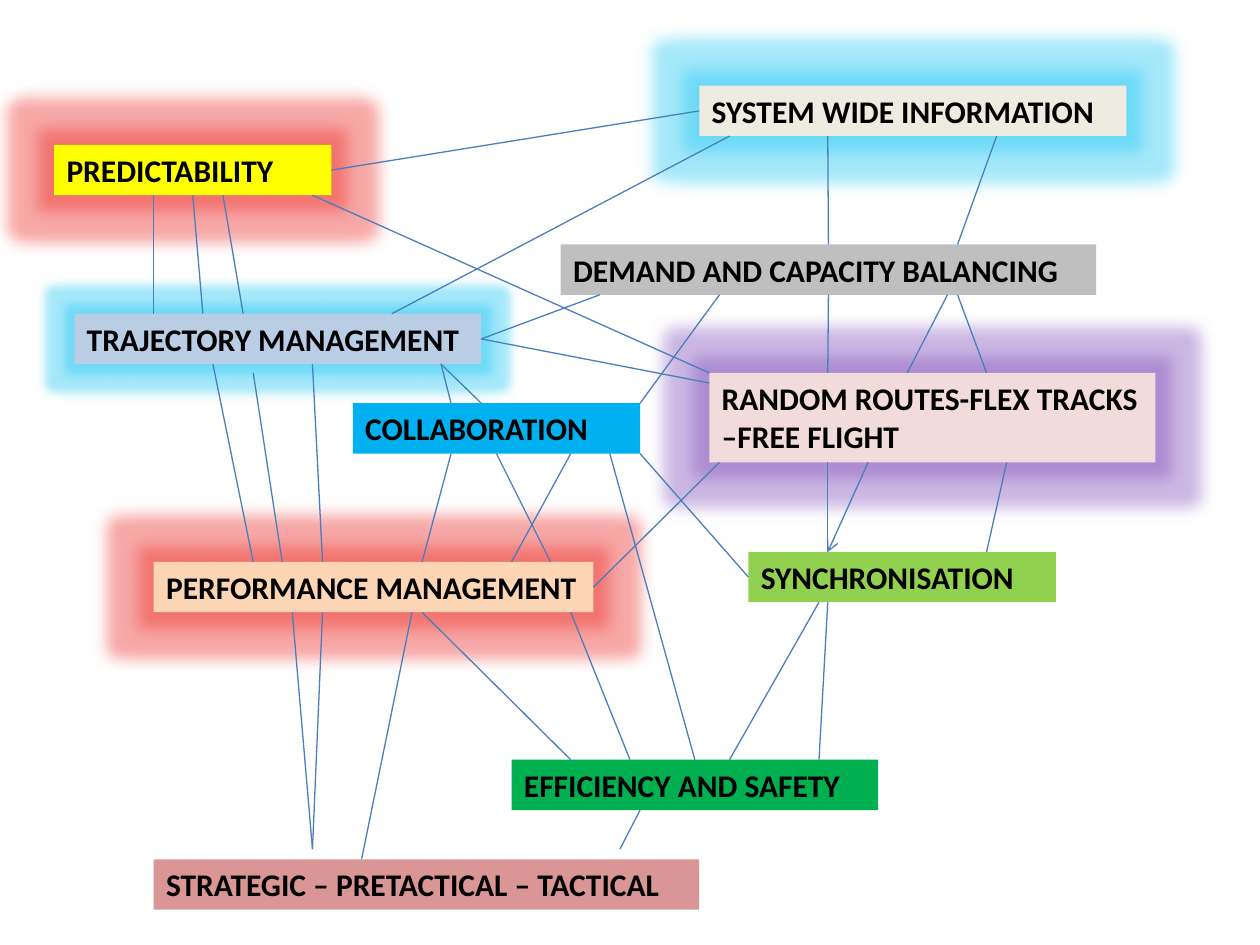
"""Build a slide of linked air traffic concepts, some of them glowing."""
from dataclasses import dataclass
from lxml.etree import SubElement
from pptx import Presentation
from pptx.dml.color import RGBColor
from pptx.enum.shapes import MSO_CONNECTOR, MSO_SHAPE
from pptx.enum.text import MSO_ANCHOR, MSO_AUTO_SIZE, PP_ALIGN
from pptx.oxml.ns import qn
from pptx.util import Inches, Pt


@dataclass(frozen=True)
class Theme:
    font: str = "Calibri"
    size: int = 18
    ink: str = "000000"
    line: str = "4B7EBC"
    weight: float = 0.75
    red: str = "accent2"
    violet: str = "accent4"
    cyan: str = "accent5"


THEME = Theme()
TOP, LEFT, BOTTOM, RIGHT = range(4)
ROW = 0.4

BOXES = {
    "predict": ("PREDICTABILITY", 0.43, 1.15, 2.2, ROW, "FFFF00"),
    "collab": ("COLLABORATION", 2.8, 3.2, 2.28, ROW, "00B0F0"),
    "system": ("SYSTEM WIDE INFORMATION", 5.55, 0.68, 3.39, ROW, "EEECE1"),
    "demand": ("DEMAND AND CAPACITY BALANCING", 4.45, 1.94, 4.25, ROW, "BFBFBF"),
    "perform": ("PERFORMANCE MANAGEMENT", 1.22, 4.46, 3.49, ROW, "FCD5B5"),
    "traject": ("TRAJECTORY MANAGEMENT", 0.59, 2.49, 3.23, ROW, "B9CDE5"),
    "sync": ("SYNCHRONISATION", 5.94, 4.38, 2.44, ROW, "92D050"),
    "safety": ("EFFICIENCY AND SAFETY", 4.06, 6.03, 2.91, ROW, "00B050"),
    "random": ("RANDOM ROUTES-FLEX TRACKS –FREE FLIGHT", 5.63, 2.96, 3.54, 0.71, "F2DCDB"),
    "phase": ("STRATEGIC – PRETACTICAL – TACTICAL", 1.22, 6.82, 4.33, ROW, "D99694"),
}
GLOWS = {
    "predict": (THEME.red, 18),
    "system": (THEME.cyan, 18),
    "perform": (THEME.red, 18),
    "traject": (THEME.cyan, 11),
    "random": (THEME.violet, 18),
}
# Each end is a box with a side number or an x on its edge, or a bare point.
LINKS = [
    (("system", 7.91), ("demand", 7.6)),
    (("predict", RIGHT), ("system", LEFT)),
    (("predict", BOTTOM), ("traject", 1.61)),
    (("system", 5.79), ("traject", 3.11)),
    (("demand", 4.76), ("traject", RIGHT)),
    (("demand", 7.6), ("random", 7.83)),
    (("random", 7.99), ("sync", 7.83)),
    (("sync", 6.5), ("safety", 5.79)),
    (("traject", 3.5), ("collab", 3.58)),
    (("collab", 4.53), ("perform", 4.06)),
    (("collab", 5.08), ("sync", LEFT)),
    (("collab", 4.84), ("safety", TOP)),
    (("traject", RIGHT), (5.63, 3.04)),
    (("perform", 3.35), ("safety", 4.53)),
    (("safety", 5.08), (4.92, 6.74)),
    (("perform", 2.56), (2.48, 6.74)),
    (("traject", 2.48), ("perform", 2.56)),
    (("random", 5.71), ("perform", RIGHT)),
    (("system", 6.57), ("demand", TOP)),
    (("demand", BOTTOM), ("random", 6.57)),
    (("random", 6.57), ("sync", 6.57)),
    (("predict", 1.22), ("traject", 1.22)),
    (("traject", 1.69), ("perform", 2.01)),
    (("predict", 1.77), ("traject", 1.93)),
    ((2.01, 2.96), ("perform", 2.24)),
    (("perform", 2.32), (2.48, 6.74)),
    (("demand", 7.52), ("random", 7.2)),
    (("random", 6.89), ("sync", 6.57), "arrow"),
    (("sync", 6.57), ("safety", 6.5)),
    (("demand", 5.71), ("collab", 5.08)),
    (("collab", 3.58), ("perform", 3.35)),
    (("perform", 3.27), ("phase", 2.87)),
    (("traject", 3.5), ("collab", 3.82)),
    (("collab", BOTTOM), ("perform", 4.37)),
    (("perform", 4.53), ("safety", 5)),
    (("predict", 2.48), ("random", 5.63)),
]


def write(shape, text, size=THEME.size, color=THEME.ink, bold=True, wrap=True):
    """Put formatted text in a shape."""
    frame = shape.text_frame
    frame.word_wrap = wrap
    frame.auto_size = MSO_AUTO_SIZE.SHAPE_TO_FIT_TEXT
    frame.vertical_anchor = MSO_ANCHOR.TOP
    para = frame.paragraphs[0]
    para.alignment = PP_ALIGN.LEFT
    run = para.add_run()
    run.text = text
    run.font.name, run.font.size, run.font.bold = THEME.font, Pt(size), bold
    run.font.color.rgb = RGBColor.from_string(color)


def glow(shape, color, size):
    """Surround a shape with a soft, saturated halo."""
    effects = shape._element.spPr.find(qn("a:effectLst"))
    halo = SubElement(effects, qn("a:glow"), rad=str(Pt(size)))
    tint = SubElement(halo, qn("a:schemeClr"), val=color)
    SubElement(tint, qn("a:satMod"), val="175000")
    SubElement(tint, qn("a:alpha"), val="40000")


def draw_box(slide, key):
    """Draw one concept box."""
    text, *place, fill = BOXES[key]
    box = slide.shapes.add_shape(MSO_SHAPE.RECTANGLE, *map(Inches, place))
    box.shadow.inherit = False
    box.fill.solid()
    box.fill.fore_color.rgb = RGBColor.from_string(fill)
    box.line.fill.background()
    write(box, text, wrap=key != "perform")
    if key in GLOWS:
        glow(box, *GLOWS[key])
    return box


def locate(end, first):
    """Return the point of a link's end."""
    name, spot = end
    if name not in BOXES:
        return end
    _, left, top, width, height, _ = BOXES[name]
    if isinstance(spot, int) and spot <= RIGHT:
        return [(left + width / 2, top), (left, top + height / 2),
                (left + width / 2, top + height), (left + width, top + height / 2)][spot]
    return spot, top + height * first


def draw_link(slide, boxes, start, stop, head=None):
    """Join two ends with a thin line."""
    points = locate(start, True) + locate(stop, False)
    link = slide.shapes.add_connector(MSO_CONNECTOR.STRAIGHT, *map(Inches, points))
    for (name, spot), join in ((start, link.begin_connect), (stop, link.end_connect)):
        if name in boxes and isinstance(spot, int) and spot <= RIGHT:
            join(boxes[name], spot)
    link.line.color.rgb = RGBColor.from_string(THEME.line)
    link.line.width = Pt(THEME.weight)
    if head:
        SubElement(link.line._get_or_add_ln(), qn("a:tailEnd"), type=head)
    SubElement(link._element.spPr, qn("a:effectLst"))


def main():
    """Build and save the slide."""
    deck = Presentation()
    deck.slide_width, deck.slide_height = Inches(10), Inches(7.5)
    slide = deck.slides.add_slide(deck.slide_layouts[6])
    boxes = {key: draw_box(slide, key) for key in BOXES}
    for link in LINKS:
        draw_link(slide, boxes, *link)
    deck.save("out.pptx")


if __name__ == "__main__":
    main()
